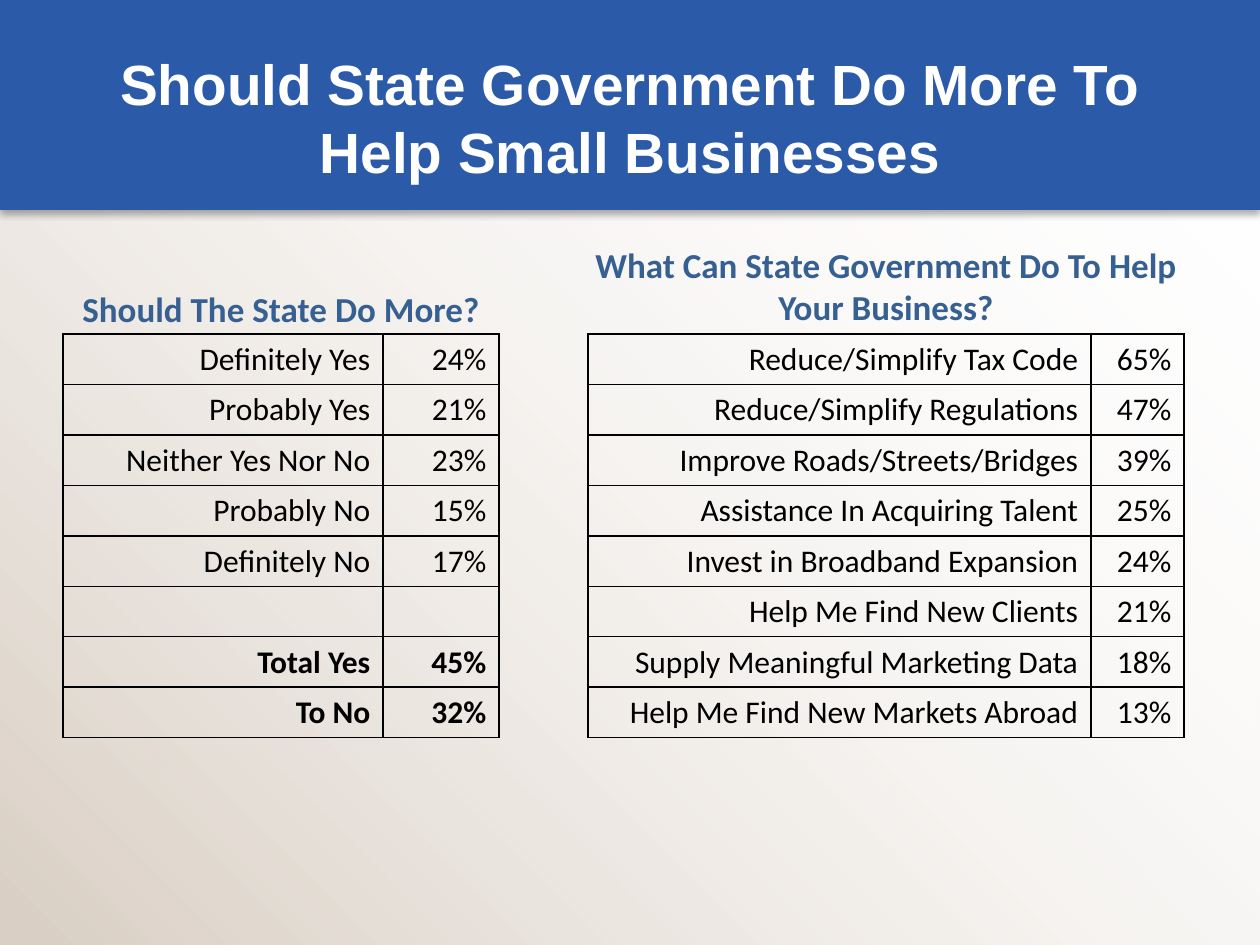
from dataclasses import dataclass

from lxml import etree
from pptx import Presentation
from pptx import util as u
from pptx.dml.color import RGBColor
from pptx.enum import shapes, text
from pptx.oxml import parse_xml
from pptx.oxml.ns import nsdecls, qn

EMU_PER_PX = 914400 // 126
WIDTH, HEIGHT = 1260, 945


@dataclass(frozen=True)
class Theme:
    sand: str = "DACFC4"
    white: str = "FFFFFF"
    banner: str = "2B5AA9"
    heading: str = "376092"
    ink: str = "000000"
    title_font: str = "Arial"
    body_font: str = "Calibri"
    title_size: float = 32.4
    heading_size: float = 20
    body_size: float = 18


THEME = Theme()

TABLE_TOP, ROW_HEIGHT = 334, 50
PANELS = [
    {
        "heading": "Should The State Do More?",
        "left": 63, "heading_top": 281, "columns": (320, 116), "bold_from": 6,
        "rows": [
            ("Definitely Yes", "24%"), ("Probably Yes", "21%"),
            ("Neither Yes Nor No", "23%"), ("Probably No", "15%"),
            ("Definitely No", "17%"), ("", ""),
            ("Total Yes", "45%"), ("To No", "32%"),
        ],
    },
    {
        "heading": "What Can State Government Do To Help Your Business?",
        "left": 588, "heading_top": 237, "columns": (503, 93), "bold_from": 8,
        "rows": [
            ("Reduce/Simplify Tax Code", "65%"),
            ("Reduce/Simplify Regulations", "47%"),
            ("Improve Roads/Streets/Bridges", "39%"),
            ("Assistance In Acquiring Talent", "25%"),
            ("Invest in Broadband Expansion", "24%"),
            ("Help Me Find New Clients", "21%"),
            ("Supply Meaningful Marketing Data", "18%"),
            ("Help Me Find New Markets Abroad", "13%"),
        ],
    },
]


def px(length):
    return u.Emu(length * EMU_PER_PX)


def apply(target, values):
    for name, value in values.items():
        setattr(target, name, value)


def write(para, words, font, size, color, align, bold=False):
    para.alignment = align
    span = para.add_run()
    span.text = words
    apply(span.font, {"name": font, "size": u.Pt(size), "bold": bold})
    span.font.color.rgb = RGBColor.from_string(color)


def add_rectangle(page, width, height):
    box = page.shapes.add_shape(shapes.MSO_SHAPE.RECTANGLE, 0, 0, px(width), px(height))
    box.shadow.inherit = False
    box.line.fill.background()
    return box


def add_backdrop(page):
    """Sand in the lower left fades to clear in the upper right."""
    fill = add_rectangle(page, WIDTH, HEIGHT).fill
    fill.gradient()
    fill.gradient_angle = 45
    for stop, color, position in zip(fill.gradient_stops, (THEME.sand, THEME.white), (0, 1)):
        stop.color.rgb = RGBColor.from_string(color)
        stop.position = position
    clear_color = fill._xPr.findall(".//" + qn("a:srgbClr"))[-1]
    etree.SubElement(clear_color, qn("a:alpha"), val="0")


def add_banner(page):
    banner = add_rectangle(page, WIDTH, 210)
    banner.fill.solid()
    banner.fill.fore_color.rgb = RGBColor.from_string(THEME.banner)
    effects = banner._element.spPr.find(qn("a:effectLst"))
    effects.append(parse_xml(
        f'<a:outerShdw {nsdecls("a")} blurRad="{u.Pt(4)}" dist="{u.Pt(2.2)}" '
        f'dir="5400000" rotWithShape="0"><a:srgbClr val="{THEME.ink}">'
        '<a:alpha val="32000"/></a:srgbClr></a:outerShdw>'))


def add_heading(page, words, place, font, size, color, anchor=text.MSO_ANCHOR.TOP):
    frame = page.shapes.add_textbox(*map(px, place)).text_frame
    apply(frame, {"word_wrap": True, "vertical_anchor": anchor})
    apply(frame, {f"margin_{side}": u.Inches(0.05)
                  for side in ("left", "top", "right", "bottom")})
    write(frame.paragraphs[0], words, font, size, color, text.PP_ALIGN.CENTER, bold=True)


def add_borders(cell):
    properties = cell._tc.get_or_add_tcPr()
    for index, side in enumerate(("lnL", "lnR", "lnT", "lnB")):
        properties.insert(index, parse_xml(
            f'<a:{side} {nsdecls("a")} w="{u.Pt(1)}"><a:solidFill>'
            f'<a:srgbClr val="{THEME.ink}"/></a:solidFill></a:{side}>'))


def add_results(page, left, columns, rows, bold_from):
    table = page.shapes.add_table(
        len(rows), len(columns), px(left), px(TABLE_TOP),
        px(sum(columns)), px(ROW_HEIGHT * len(rows))).table
    apply(table, {"first_row": False, "horz_banding": False})
    for column, width in zip(table.columns, columns):
        column.width = px(width)
    for row_index, values in enumerate(rows):
        for column_index, words in enumerate(values):
            cell = table.cell(row_index, column_index)
            cell.fill.background()
            add_borders(cell)
            if words:
                write(cell.text_frame.paragraphs[0], words, THEME.body_font,
                      THEME.body_size, THEME.ink, text.PP_ALIGN.RIGHT,
                      bold=row_index >= bold_from)


def add_panel(page, heading, left, heading_top, columns, rows, bold_from):
    add_results(page, left, columns, rows, bold_from)
    place = (left, heading_top, sum(columns), TABLE_TOP - heading_top)
    add_heading(page, heading, place, THEME.body_font, THEME.heading_size, THEME.heading)


def main():
    deck = Presentation()
    apply(deck, {"slide_width": px(WIDTH), "slide_height": px(HEIGHT)})
    page = deck.slides.add_slide(deck.slide_layouts[6])
    add_backdrop(page)
    add_banner(page)
    add_heading(page, "Should State Government Do More To Help Small Businesses",
                (63, 38, 1134, 158), THEME.title_font, THEME.title_size,
                THEME.white, text.MSO_ANCHOR.MIDDLE)
    for panel in PANELS:
        add_panel(page, **panel)
    deck.save("out.pptx")


if __name__ == "__main__":
    main()
